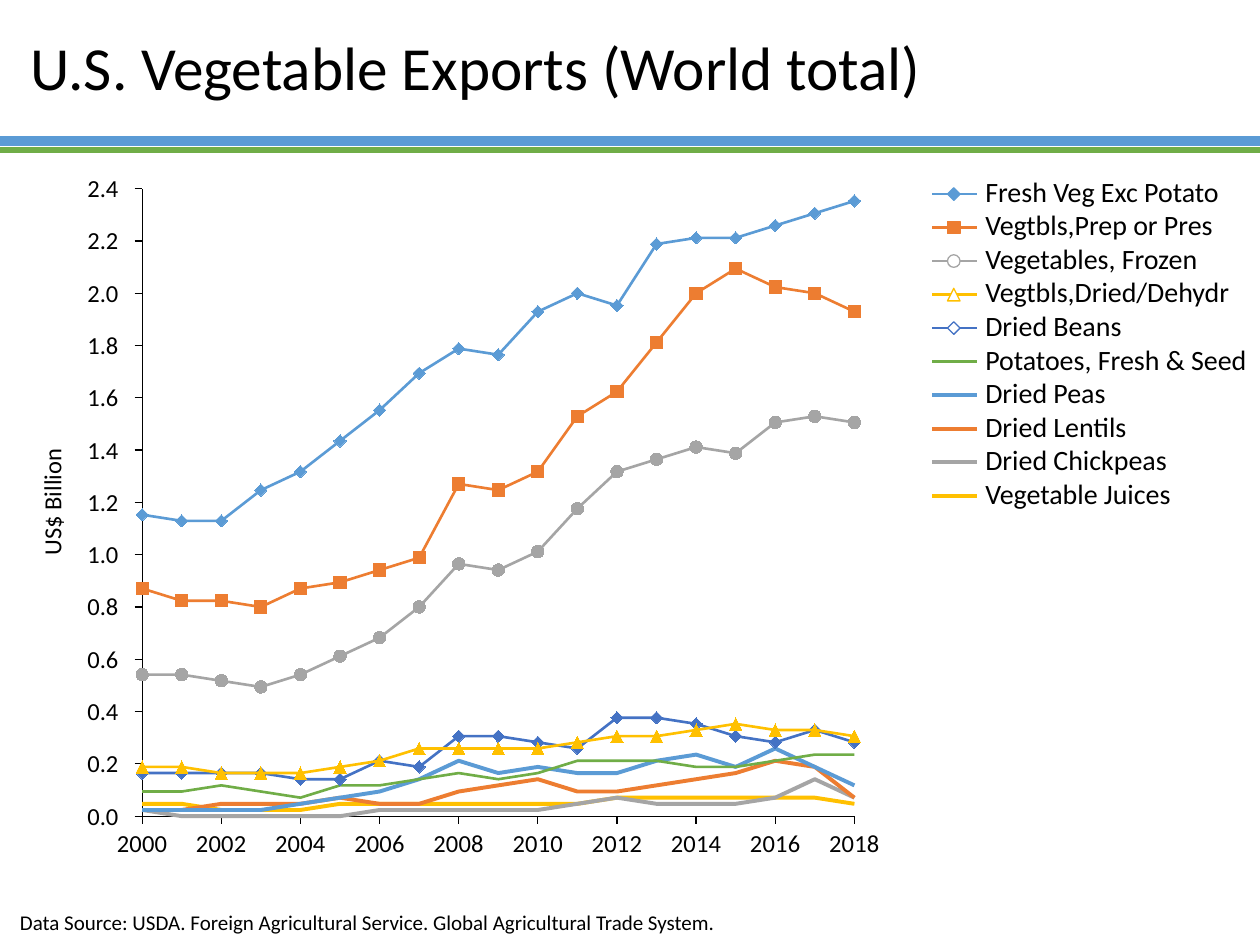
from lxml.etree import SubElement
from pptx import Presentation
from pptx.chart.data import XyChartData
from pptx.dml.color import RGBColor
from pptx.enum.chart import XL_CHART_TYPE, XL_MARKER_STYLE, XL_TICK_LABEL_POSITION, XL_TICK_MARK
from pptx.enum.shapes import MSO_CONNECTOR, MSO_SHAPE
from pptx.enum.text import MSO_ANCHOR, PP_ALIGN
from pptx.oxml import parse_xml
from pptx.oxml.ns import nsdecls, qn
from pptx.util import Inches, Pt

FONT = "Calibri"
COLORS = {"blue": "5B9BD5", "orange": "ED7D31", "gray": "A5A5A5", "gold": "FFC000",
          "navy": "4472C4", "green": "70AD47", "black": "000000", "white": "FFFFFF"}
YEARS = range(2000, 2019)
# name, colour, line width, marker, legend marker fill, values (top value = 100)
SERIES = [
    ("Fresh Veg Exc Potato", "blue", 1.5, "diamond", "blue",
     [49, 48, 48, 53, 56, 61, 66, 72, 76, 75, 82, 85, 83, 93, 94, 94, 96, 98, 100]),
    ("Vegtbls,Prep or Pres", "orange", 1.5, "square", "orange",
     [37, 35, 35, 34, 37, 38, 40, 42, 54, 53, 56, 65, 69, 77, 85, 89, 86, 85, 82]),
    ("Vegetables, Frozen", "gray", 1.5, "circle", "white",
     [23, 23, 22, 21, 23, 26, 29, 34, 41, 40, 43, 50, 56, 58, 60, 59, 64, 65, 64]),
    ("Vegtbls,Dried/Dehydr", "gold", 1.5, "triangle", "white",
     [8, 8, 7, 7, 7, 8, 9, 11, 11, 11, 11, 12, 13, 13, 14, 15, 14, 14, 13]),
    ("Dried Beans", "navy", 1.5, "diamond", "white",
     [7, 7, 7, 7, 6, 6, 9, 8, 13, 13, 12, 11, 16, 16, 15, 13, 12, 14, 12]),
    ("Potatoes, Fresh & Seed", "green", 1.5, None, None,
     [4, 4, 5, 4, 3, 5, 5, 6, 7, 6, 7, 9, 9, 9, 8, 8, 9, 10, 10]),
    ("Dried Peas", "blue", 2.25, None, None,
     [1, 1, 1, 1, 2, 3, 4, 6, 9, 7, 8, 7, 7, 9, 10, 8, 11, 8, 5]),
    ("Dried Lentils", "orange", 2.25, None, None,
     [1, 1, 2, 2, 2, 3, 2, 2, 4, 5, 6, 4, 4, 5, 6, 7, 9, 8, 3]),
    ("Dried Chickpeas", "gray", 2.25, None, None,
     [1, 0, 0, 0, 0, 0, 1, 1, 1, 1, 1, 2, 3, 2, 2, 2, 3, 6, 3]),
    ("Vegetable Juices", "gold", 2.25, None, None,
     [2, 2, 1, 1, 1, 2, 2, 2, 2, 2, 2, 2, 3, 3, 3, 3, 3, 3, 2]),
]
MARKERS = {
    "diamond": (XL_MARKER_STYLE.DIAMOND, MSO_SHAPE.DIAMOND),
    "square": (XL_MARKER_STYLE.SQUARE, MSO_SHAPE.RECTANGLE),
    "circle": (XL_MARKER_STYLE.CIRCLE, MSO_SHAPE.OVAL),
    "triangle": (XL_MARKER_STYLE.TRIANGLE, MSO_SHAPE.ISOSCELES_TRIANGLE),
}


def color(name):
    return RGBColor.from_string(COLORS[name])


def style(line, name, width):
    line.color.rgb = color(name)
    line.width = Pt(width)


def paint(fill, name):
    fill.solid()
    fill.fore_color.rgb = color(name)


def write(shape, text, size, align=PP_ALIGN.LEFT, anchor=MSO_ANCHOR.MIDDLE,
          inset=0, wrap=False, spacing=0.9):
    frame = shape.text_frame
    frame.word_wrap, frame.vertical_anchor = wrap, anchor
    frame.margin_left = frame.margin_right = Inches(inset)
    frame.margin_top = frame.margin_bottom = Inches(inset / 2)
    para = frame.paragraphs[0]
    para.alignment, para.line_spacing = align, spacing
    run = para.add_run()
    run.text = text
    run.font.name, run.font.size = FONT, Pt(size)
    run.font.color.rgb = color("black")


def label(slide, box, text, size, **form):
    shape = slide.shapes.add_textbox(*map(Inches, box))
    write(shape, text, size, **form)
    return shape


def rule(slide, left, right, y, name, width):
    line = slide.shapes.add_connector(
        MSO_CONNECTOR.STRAIGHT, Inches(left), Inches(y), Inches(right), Inches(y))
    style(line.line, name, width)
    SubElement(line._element.spPr, qn("a:effectLst"))


def set_axis(axis, low, high, step):
    axis.minimum_scale, axis.maximum_scale, axis.major_unit = low, high, step
    axis.has_major_gridlines = axis.has_title = False
    axis.major_tick_mark, axis.minor_tick_mark = XL_TICK_MARK.OUTSIDE, XL_TICK_MARK.NONE
    style(axis.format.line, "black", 0.75)
    font = axis.tick_labels.font
    font.name, font.size = FONT, Pt(14)
    font.color.rgb = color("black")


def add_plot(slide):
    data = XyChartData()
    for name, *_, values in SERIES:
        series = data.add_series(name)
        for year, value in zip(YEARS, values):
            series.add_data_point(year, value)
    chart = slide.shapes.add_chart(
        XL_CHART_TYPE.XY_SCATTER_LINES, *map(Inches, (0.75, 1.41, 6.41, 5.48)), data).chart
    chart.has_legend = chart.has_title = False
    chart.font.name, chart.font.size = FONT, Pt(10)
    chart.font.color.rgb = color("black")
    plot = chart.plots[0]
    plot.vary_by_categories = False
    for series, (_, hue, width, mark, *_) in zip(plot.series, SERIES):
        series.smooth = False
        style(series.format.line, hue, width)
        if mark:
            series.marker.style, series.marker.size = MARKERS[mark][0], 7
            paint(series.marker.format.fill, hue)
            style(series.marker.format.line, hue, 0.75)
        else:
            series.marker.style = XL_MARKER_STYLE.NONE
    set_axis(chart.category_axis, 2000, 2018, 2)
    chart.category_axis.tick_labels.number_format = '0;"-"0'
    chart.category_axis.tick_labels.number_format_is_linked = False
    set_axis(chart.value_axis, 0, 102, 8.5)
    chart.value_axis.tick_label_position = XL_TICK_LABEL_POSITION.NONE
    place = "".join(f'<c:{tag} val="{val}"/>' for tag, val in (
        ("layoutTarget", "inner"), ("xMode", "edge"), ("yMode", "edge"),
        ("x", 0.059), ("y", 0.016), ("w", 0.882), ("h", 0.909)))
    area = chart._chartSpace.chart.plotArea
    for old in area.findall(qn("c:layout")):
        area.remove(old)
    area.insert(0, parse_xml(
        f'<c:layout {nsdecls("c")}><c:manualLayout>{place}</c:manualLayout></c:layout>'))


def add_key(slide):
    for i, (name, hue, width, mark, fill, _) in enumerate(SERIES):
        y = 1.54 + i * 0.266
        rule(slide, 7.4, 7.75, y, hue, width)
        if mark:
            dot = slide.shapes.add_shape(
                MARKERS[mark][1], *map(Inches, (7.52, y - 0.05, 0.1, 0.1)))
            dot.shadow.inherit = False
            paint(dot.fill, fill)
            style(dot.line, hue, 0.75)
        label(slide, (7.82, y - 0.11, 2.15, 0.21), name, 16)


def main():
    deck = Presentation()
    deck.slide_width, deck.slide_height = Inches(10), Inches(7.5)
    slide = deck.slides.add_slide(deck.slide_layouts[5])
    rule(slide, -0.01, 10.02, 1.12, "blue", 6)
    rule(slide, -0.01, 10.02, 1.19, "green", 3)
    title = slide.shapes.title
    title.left, title.top, title.width, title.height = map(Inches, (0.14, 0.1, 9.76, 0.92))
    write(title, "U.S. Vegetable Exports (World total)", 35, inset=0.1, wrap=True)
    add_plot(slide)
    for i in range(13):
        label(slide, (0.69, 6.38 - i * 0.415, 0.25, 0.21), f"{i * 0.2:.1f}", 14,
              align=PP_ALIGN.RIGHT)
    unit = label(slide, (0.32, 3.56, 0.21, 0.85), "US$ Billion", 14,
                 align=PP_ALIGN.CENTER, anchor=MSO_ANCHOR.BOTTOM)
    unit.text_frame._txBody.bodyPr.set("vert", "vert270")
    add_key(slide)
    label(slide, (0.06, 7.17, 9.76, 0.3),
          "Data Source: USDA. Foreign Agricultural Service. Global Agricultural Trade System.",
          12, anchor=MSO_ANCHOR.TOP, inset=0.1, wrap=True, spacing=1.0)
    deck.save("out.pptx")


if __name__ == "__main__":
    main()
